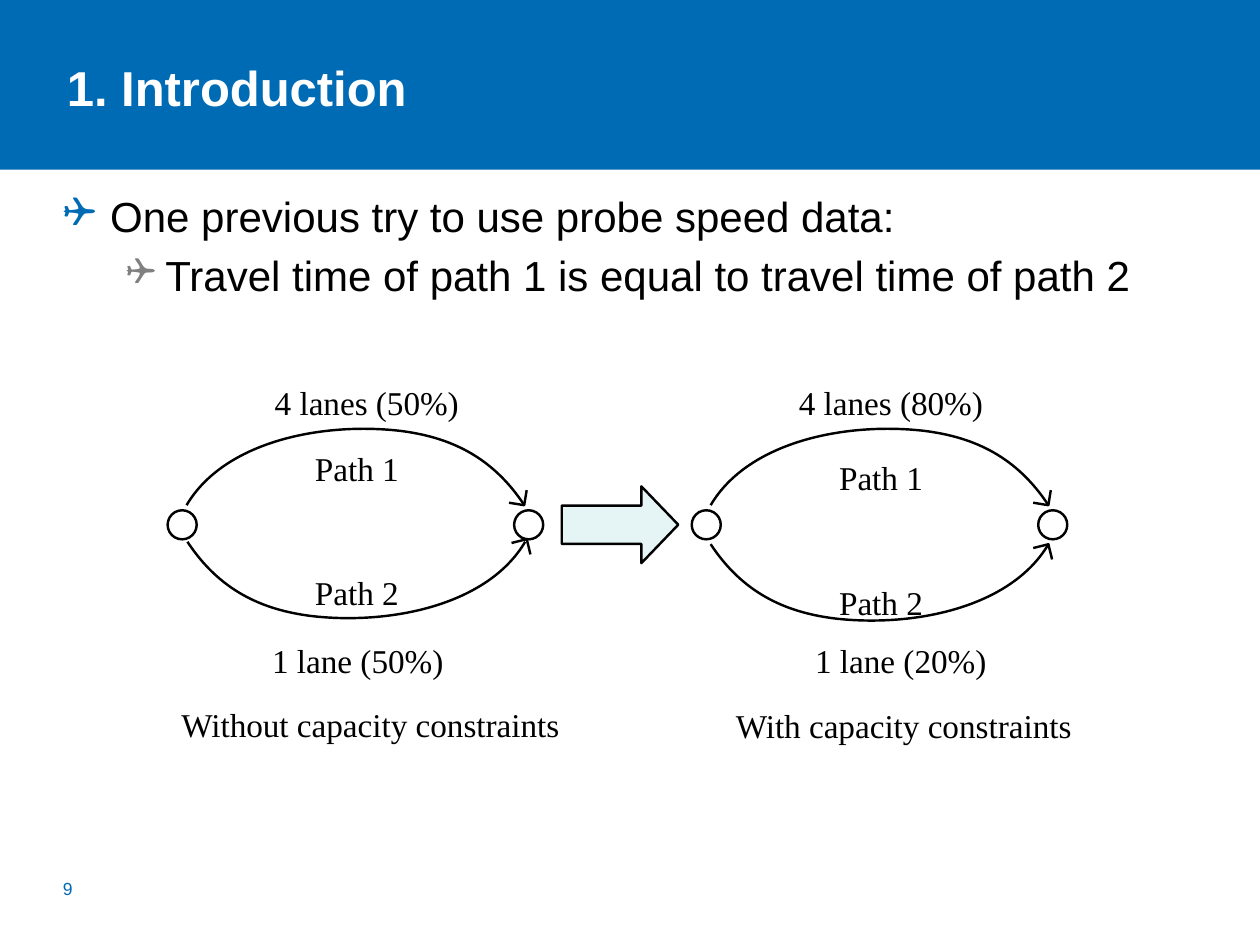
from lxml.etree import SubElement
from pptx import Presentation
from pptx.dml.color import RGBColor
from pptx.enum.shapes import MSO_SHAPE as Shape
from pptx.enum.text import MSO_ANCHOR as Anchor, MSO_AUTO_SIZE as AutoSize
from pptx.oxml.ns import qn
from pptx.util import Pt

COLORS = {"banner": "006BB5", "number": "0067B1", "sub_bullet": "808080",
          "arrow": "E5F5F5", "ink": "000000", "white": "FFFFFF"}
SANS, SERIF, SYMBOLS = "Arial", "Times New Roman", "Wingdings"

TITLE = "1. Introduction"
PAGE_NUMBER = "9"
# text, bullet colour, bullet size in percent, left margin, hanging indent
BULLETS = [
    ("One previous try to use probe speed data:", "banner", 100, 27, 27),
    ("Travel time of path 1 is equal to travel time of path 2", "sub_bullet", 90, 58.5, 22.5),
]

# Each network: left edge, labels (text, left, top), shift of lower arc and of its head
NETWORKS = [
    {"left": 95.8,
     "labels": [("4 lanes (50%)", 157, 218.2), ("Path 1", 180, 256.3),
                ("Path 2", 180, 326.9), ("1 lane (50%)", 155.5, 365.8),
                ("Without capacity constraints", 103.7, 402.5)],
     "arc_shift": (0.5, -1.4), "head_shift": (1.4, -2.9)},
    {"left": 395.3,
     "labels": [("4 lanes (80%)", 456.5, 218.2), ("Path 1", 479.5, 261.4),
                ("Path 2", 479.5, 332.6), ("1 lane (20%)", 465.8, 365.8),
                ("With capacity constraints", 420.5, 403.2)],
     "arc_shift": (0, 0), "head_shift": (0, 0)},
]
CHAR_WIDTH = 8.7
NODE_SIZE, NODE_TOP, NODE_GAP = 16.6, 291.6, 198
LINE_WIDTH = 1.38
# Two joined Bezier curves, relative to the left edge of a network
UPPER_ARC = [(10.8, 288.7), (32.4, 252), (88.6, 241.2), (132.5, 246.2),
             (162, 249.8), (185.8, 261.4), (203.8, 288.7)]
UPPER_HEAD = [(195.1, 287.3), (203.8, 288.7), (205.2, 280.1)]
LOWER_HEAD = [(205.9, 319.7), (203.8, 311), (195.1, 313.2)]
# The lower arc is the upper one turned by half a circle
LOWER_ARC = [(214.6 - x, 599.7 - y) for x, y in UPPER_ARC]


def rgb(name):
    return RGBColor.from_string(COLORS[name])


def style_text(para, size, font, color, bold=False):
    for span in para.runs:
        span.font.size, span.font.name, span.font.bold = Pt(size), font, bold
        span.font.color.rgb = rgb(color)


def add_box(page, left, top, width, height, wrap=True):
    """Text box without insets; returns its text frame."""
    box = page.shapes.add_textbox(Pt(left), Pt(top), Pt(width), Pt(height))
    frame = box.text_frame
    frame.margin_left = frame.margin_right = frame.margin_top = frame.margin_bottom = 0
    frame.word_wrap = wrap
    return frame


def set_indent(para, margin, hanging):
    props = para._p.get_or_add_pPr()
    props.set("marL", str(Pt(margin)))
    props.set("indent", str(-Pt(hanging)))
    return props


def set_bullet(para, color, percent, margin, hanging):
    props = set_indent(para, margin, hanging)
    SubElement(SubElement(props, qn("a:buClr")), qn("a:srgbClr"), val=COLORS[color])
    SubElement(props, qn("a:buSzPct"), val=str(percent * 1000))
    SubElement(props, qn("a:buFont"), typeface=SYMBOLS)
    SubElement(props, qn("a:buChar"), char="❑")


def style_shape(shape, fill=None, line=None):
    shape.shadow.inherit = False
    if fill:
        shape.fill.solid()
        shape.fill.fore_color.rgb = rgb(fill)
    else:
        shape.fill.background()
    if line:
        shape.line.color.rgb = rgb(line)
        shape.line.width = Pt(LINE_WIDTH)
    else:
        shape.line.fill.background()


def add_preset(page, kind, left, top, width, height, fill, line=None):
    shape = page.shapes.add_shape(kind, Pt(left), Pt(top), Pt(width), Pt(height))
    style_shape(shape, fill, line)
    return shape


def add_path(page, points, dx, dy=0):
    corners = [(Pt(x + dx), Pt(y + dy)) for x, y in points]
    builder = page.shapes.build_freeform(*corners[0], scale=1)
    builder.add_line_segments(corners[1:], close=False)
    shape = builder.convert_to_shape()
    style_shape(shape, line="ink")
    return shape


def add_arc(page, points, dx, dy=0):
    """Path whose segments, three by three, become Bezier curves."""
    shape = add_path(page, points, dx, dy)
    segments = list(shape._element.iter(qn("a:lnTo")))
    outline = segments[0].getparent()
    for start in range(0, len(segments), 3):
        curve = SubElement(outline, qn("a:cubicBezTo"))
        for segment in segments[start:start + 3]:
            curve.append(segment[0])
            outline.remove(segment)


def add_network(page, network):
    left = network["left"]
    arc_x, arc_y = network["arc_shift"]
    head_x, head_y = network["head_shift"]
    add_arc(page, UPPER_ARC, left)
    add_path(page, UPPER_HEAD, left)
    for x in (left, left + NODE_GAP):
        add_preset(page, Shape.OVAL, x, NODE_TOP, NODE_SIZE, NODE_SIZE, "white", "ink")
    add_arc(page, LOWER_ARC, left + arc_x, arc_y)
    add_path(page, LOWER_HEAD, left + head_x, head_y)
    for text, x, y in network["labels"]:
        frame = add_box(page, x, y, len(text) * CHAR_WIDTH, 23, wrap=False)
        frame.auto_size = AutoSize.SHAPE_TO_FIT_TEXT
        frame.text = text
        style_text(frame.paragraphs[0], 19, SERIF, "ink")


def add_texts(page):
    title = add_box(page, 38.2, 11.8, 666, 72.7)
    title.vertical_anchor = Anchor.MIDDLE
    title.text = TITLE
    para = title.paragraphs[0]
    para.line_spacing = 1.1
    set_indent(para, 36.7, 36.7)
    style_text(para, 28, SANS, "white", bold=True)

    body = add_box(page, 36, 108.7, 648, 384.5)
    body.text = "\n".join(text for text, *_ in BULLETS)
    for level, (para, (_, *bullet)) in enumerate(zip(body.paragraphs, BULLETS)):
        set_bullet(para, *bullet)
        para.level = level
        if level:
            para.space_before = Pt(5)
        style_text(para, 24, SANS, "ink")

    number = add_box(page, 36, 501.8, 28, 25)
    number.text = PAGE_NUMBER
    style_text(number.paragraphs[0], 10, SANS, "number")


def main():
    deck = Presentation()
    deck.slide_width, deck.slide_height = Pt(720), Pt(540)
    page = deck.slides.add_slide(deck.slide_layouts[6])
    add_preset(page, Shape.RECTANGLE, 0, 0, 720, 97, "banner")
    add_texts(page)
    for network in NETWORKS:
        add_network(page, network)
    arrow = add_preset(page, Shape.RIGHT_ARROW, 321, 277.9, 66.6, 43.9, "arrow", "ink")
    arrow.adjustments[1] = 0.48
    deck.save("out.pptx")


if __name__ == "__main__":
    main()
